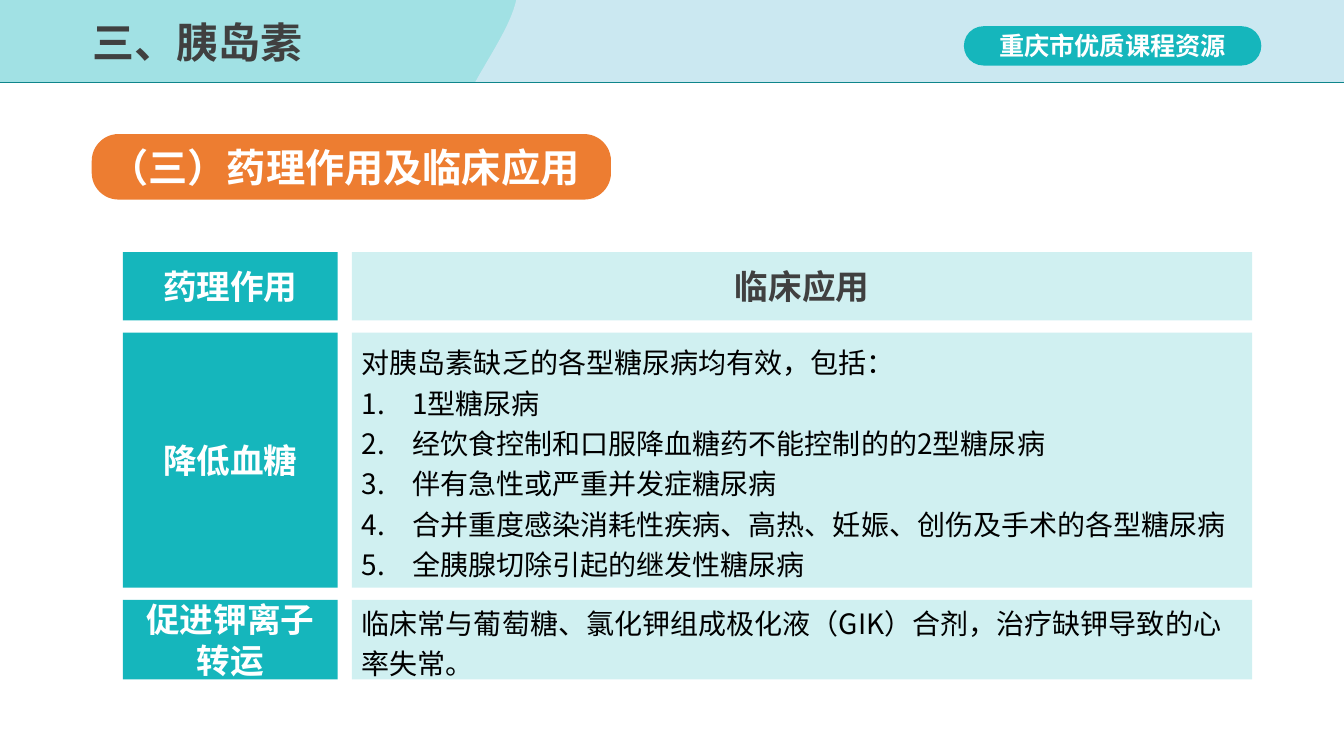
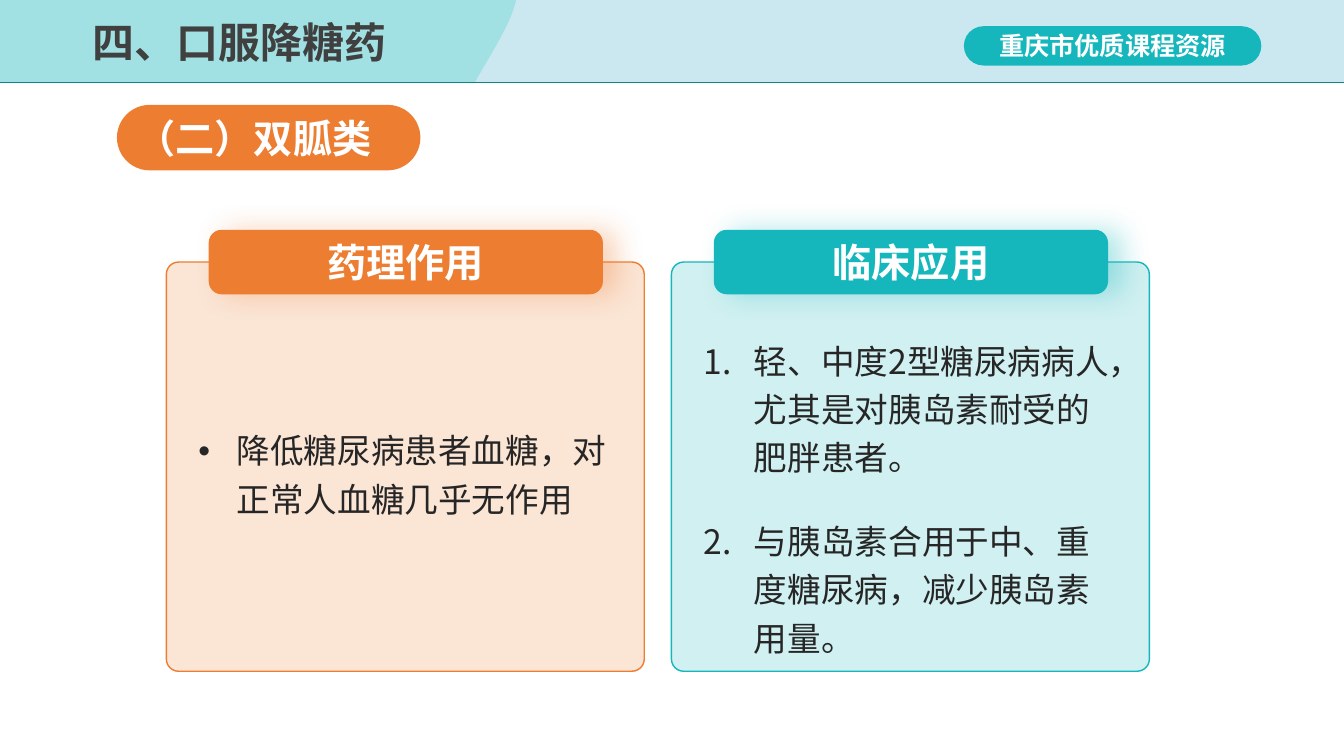
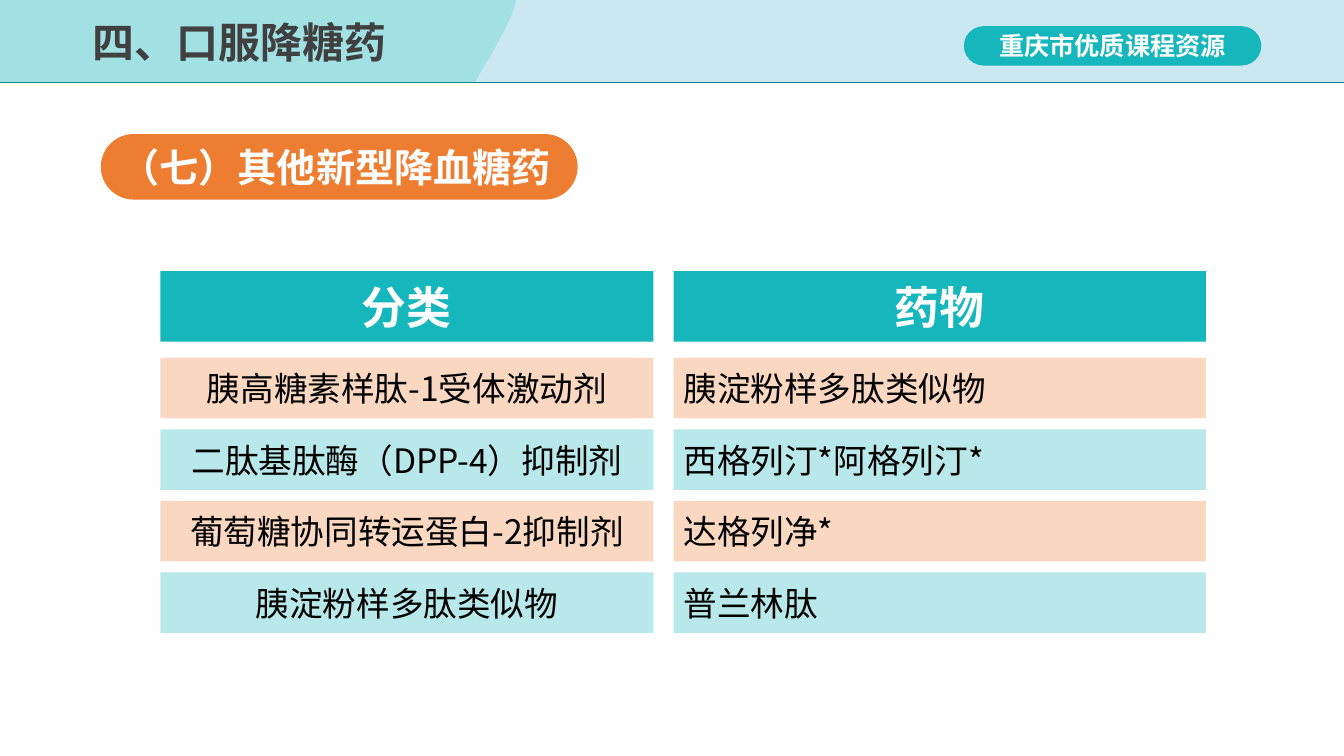
"""Build three pharmacology slides on insulin and oral glucose-lowering drugs."""
from dataclasses import dataclass
from typing import Optional

from lxml.etree import SubElement
from pptx import Presentation
from pptx.dml.color import RGBColor
from pptx.enum.shapes import MSO_CONNECTOR as CONN, MSO_SHAPE as SHAPE
from pptx.enum.text import MSO_ANCHOR as ANCHOR, MSO_AUTO_SIZE as AUTO, PP_ALIGN as ALIGN
from pptx.oxml.ns import qn
from pptx.util import Inches, Pt

FONT = "Noto Sans CJK SC"
TEAL = RGBColor(0x15, 0xB6, 0xBC)
DARK_TEAL = RGBColor(0x0F, 0x85, 0x8B)
ORANGE = RGBColor(0xED, 0x7D, 0x31)
PALE_BLUE = RGBColor(0xDE, 0xEB, 0xF7)
WHITE = RGBColor(0xFF, 0xFF, 0xFF)
BLACK = RGBColor(0, 0, 0)
GREY = RGBColor(0x40, 0x40, 0x40)
INK = RGBColor(0x26, 0x26, 0x26)
WIDTH, HEIGHT, BAND = 13.33, 7.5, 0.82


@dataclass(frozen=True)
class Box:
    """Place and size in inches."""
    x: float
    y: float
    w: float
    h: float

    def emu(self) -> tuple:
        """Return the four lengths for python-pptx."""
        return tuple(Inches(v) for v in (self.x, self.y, self.w, self.h))


@dataclass(frozen=True)
class Style:
    """Look of a paragraph."""
    size: int
    color: RGBColor
    bold: bool = False
    align: ALIGN = ALIGN.LEFT
    spacing: Optional[float] = None
    before: int = 0
    bullet: str = ""
    indent: float = 0


@dataclass(frozen=True)
class Para:
    """Text with its style."""
    text: str
    style: Style


@dataclass(frozen=True)
class Card:
    """Panel with a raised heading."""
    heading: str
    color: RGBColor
    text_y: float
    text_h: float
    paras: tuple


TITLE = Style(30, GREY, True, spacing=0.9)
BADGE = Style(18, WHITE, True, ALIGN.CENTER)
SECTION = Style(28, WHITE, True)
CARD_HEAD = Style(28, WHITE, True, ALIGN.CENTER)
LABEL = Style(24, WHITE, True, ALIGN.CENTER)
GRID_HEAD = Style(24, GREY, True, ALIGN.CENTER)
BODY = Style(20, BLACK, spacing=1.2)
NUMBERED = Style(20, BLACK, spacing=1.2, bullet="1.", indent=0.5)
CARD_DOT = Style(24, INK, spacing=1.2, bullet="•", indent=0.38)
CARD_NUMBER = Style(24, INK, spacing=1.2, before=25, bullet="1.", indent=0.5)
COLUMN_HEAD = Style(32, WHITE, True, ALIGN.CENTER)
CLASS_CELL = Style(24, BLACK, align=ALIGN.CENTER)
DRUG_CELL = Style(24, BLACK)


def add_bullet(p, style: Style) -> None:
    """Give a paragraph a hanging bullet or number."""
    pPr = p._p.get_or_add_pPr()
    pPr.set("marL", str(Inches(style.indent)))
    pPr.set("indent", str(-Inches(style.indent)))
    if style.bullet == "1.":
        SubElement(pPr, qn("a:buAutoNum"), type="arabicPeriod")
    else:
        SubElement(pPr, qn("a:buFont"), typeface="Arial")
        SubElement(pPr, qn("a:buChar"), char=style.bullet)


def write(tf, *paras: Para) -> None:
    """Fill a text frame, one paragraph per item."""
    tf.word_wrap = True
    for i, para in enumerate(paras):
        style = para.style
        p = tf.add_paragraph() if i else tf.paragraphs[0]
        p.alignment = style.align
        if style.spacing:
            p.line_spacing = style.spacing
        if i and style.before:
            p.space_before = Pt(style.before)
        if style.bullet:
            add_bullet(p, style)
        r = p.add_run()
        r.text = para.text
        r.font.size, r.font.bold = Pt(style.size), style.bold
        r.font.color.rgb = style.color
        r.font.name = FONT
        SubElement(r._r.get_or_add_rPr(), qn("a:ea"), typeface=FONT)


def paint(sp, color: RGBColor, alpha: int = 100, line: Optional[RGBColor] = None) -> None:
    """Set fill, opacity and outline, without a shadow."""
    sp.shadow.inherit = False
    sp.fill.solid()
    sp.fill.fore_color.rgb = color
    if alpha < 100:
        clr = sp._element.spPr.find(qn("a:solidFill")).find(qn("a:srgbClr"))
        SubElement(clr, qn("a:alpha"), val=str(alpha * 1000))
    if line is None:
        sp.line.fill.background()
    else:
        sp.line.color.rgb = line
        sp.line.width = Pt(1)


def add_block(s, box: Box, color: RGBColor, *paras: Para, alpha: int = 100,
              radius: Optional[float] = None, line: Optional[RGBColor] = None):
    """Draw a filled rectangle, rounded when a radius is given."""
    kind = SHAPE.RECTANGLE if radius is None else SHAPE.ROUNDED_RECTANGLE
    sp = s.shapes.add_shape(kind, *box.emu())
    if radius is not None:
        sp.adjustments[0] = radius
    paint(sp, color, alpha, line)
    sp.text_frame.vertical_anchor = ANCHOR.MIDDLE
    if paras:
        write(sp.text_frame, *paras)
    return sp


def add_glow(sp, color: RGBColor) -> None:
    """Add a soft coloured shadow to the right."""
    effects = sp._element.spPr.find(qn("a:effectLst"))
    shadow = SubElement(effects, qn("a:outerShdw"), blurRad=str(Pt(20)),
                        dist=str(Pt(10)), dir="0", rotWithShape="0")
    clr = SubElement(shadow, qn("a:srgbClr"), val=str(color))
    SubElement(clr, qn("a:alpha"), val="32000")


def add_sweep(s) -> None:
    """Draw the pale part of the band with its curved left edge."""
    curve = ((4.71, BAND), (4.86, 0.55), (5.07, 0.24), (5.12, 0))
    steps = 16
    edge = []
    for i in range(steps + 1):
        t = i / steps
        weights = ((1 - t) ** 3, 3 * t * (1 - t) ** 2, 3 * t * t * (1 - t), t ** 3)
        edge.append(tuple(Inches(sum(k * pt[axis] for k, pt in zip(weights, curve)))
                          for axis in (0, 1)))
    corners = [(Inches(WIDTH), 0), (Inches(WIDTH), Inches(BAND))]
    builder = s.shapes.build_freeform(*edge[0], scale=1.0)
    builder.add_line_segments(edge[1:] + corners, close=True)
    paint(builder.convert_to_shape(), PALE_BLUE, 70)


def add_band(s, layout) -> None:
    """Draw the header band and hand it to the layout."""
    old = list(s.shapes.element)
    add_block(s, Box(0, 0, WIDTH, BAND), TEAL, alpha=40)
    add_sweep(s)
    add_block(s, Box(9.56, 0.26, 2.95, 0.39), TEAL, Para("重庆市优质课程资源", BADGE), radius=0.5)
    rule = s.shapes.add_connector(CONN.STRAIGHT, 0, Inches(BAND), Inches(WIDTH), Inches(BAND))
    rule.line.color.rgb = DARK_TEAL
    rule.line.width = Pt(1)
    SubElement(rule._element.spPr, qn("a:effectLst"))
    for el in list(s.shapes.element):
        if el not in old:
            layout.shapes.element.append(el)


def add_slide(prs, title: str, section: str, box: Box, radius: float = 0.5):
    """Add a slide with its title and section label."""
    s = prs.slides.add_slide(prs.slide_layouts[5])
    sp = s.shapes.title
    sp.left, sp.top, sp.width, sp.height = Box(0.82, 0.08, 5.57, 0.74).emu()
    tf = sp.text_frame
    tf.auto_size, tf.vertical_anchor = AUTO.NONE, ANCHOR.MIDDLE
    write(tf, Para(title, TITLE))
    add_block(s, box, ORANGE, Para(section, SECTION), radius=radius)
    return s


def add_effects_grid(s) -> None:
    """Draw the grid of insulin effects and uses."""
    uses = ("1型糖尿病", "经饮食控制和口服降血糖药不能控制的的2型糖尿病",
            "伴有急性或严重并发症糖尿病",
            "合并重度感染消耗性疾病、高热、妊娠、创伤及手术的各型糖尿病",
            "全胰腺切除引起的继发性糖尿病")
    rows = (
        (0.68, "药理作用", [Para("临床应用", GRID_HEAD)]),
        (2.53, "降低血糖", [Para("对胰岛素缺乏的各型糖尿病均有效，包括：", BODY)]
         + [Para(use, NUMBERED) for use in uses]),
        (0.79, "促进钾离子转运",
         [Para("临床常与葡萄糖、氯化钾组成极化液（GIK）合剂，治疗缺钾导致的心率失常。", BODY)]),
    )
    y, gap = 2.5, 0.12
    for h, effect, paras in rows:
        add_block(s, Box(1.22, y, 2.13, h), TEAL, Para(effect, LABEL))
        add_block(s, Box(3.49, y, 8.93, h), TEAL, *paras, alpha=20)
        y += h + gap


def add_card(s, x: float, card: Card) -> None:
    """Draw a panel, its text and its raised heading."""
    add_block(s, Box(x, 2.6, 4.74, 4.06), card.color, alpha=20, radius=0.03, line=card.color)
    tb = s.shapes.add_textbox(*Box(x + 0.22, card.text_y, 4.3, card.text_h).emu())
    write(tb.text_frame, *card.paras)
    head = add_block(s, Box(x + 0.42, 2.28, 3.91, 0.64), card.color,
                     Para(card.heading, CARD_HEAD), radius=0.2)
    add_glow(head, card.color)


def add_drug_grid(s) -> None:
    """Draw the drug classes beside their drugs."""
    columns = ((1.59, 4.89, "分类", CLASS_CELL), (6.68, 5.28, "药物", DRUG_CELL))
    rows = (("胰高糖素样肽-1受体激动剂", "胰淀粉样多肽类似物"),
            ("二肽基肽酶（DPP-4）抑制剂", "西格列汀*阿格列汀*"),
            ("葡萄糖协同转运蛋白-2抑制剂", "达格列净*"),
            ("胰淀粉样多肽类似物", "普兰林肽"))
    for col, (x, w, heading, style) in enumerate(columns):
        add_block(s, Box(x, 2.69, w, 0.7), TEAL, Para(heading, COLUMN_HEAD))
        for i, row in enumerate(rows):
            add_block(s, Box(x, 3.55 + 0.71 * i, w, 0.6), (ORANGE, TEAL)[i % 2],
                      Para(row[col], style), alpha=30)


def main() -> None:
    """Build and save the presentation."""
    prs = Presentation()
    prs.slide_width, prs.slide_height = Inches(WIDTH), Inches(HEIGHT)

    s = add_slide(prs, "三、胰岛素", "（三）药理作用及临床应用", Box(0.91, 1.33, 5.15, 0.65), 0.41)
    add_band(s, prs.slide_layouts[5])
    add_effects_grid(s)

    s = add_slide(prs, "四、口服降糖药", "（二）双胍类", Box(1.16, 1.04, 3.01, 0.65))
    cards = (
        Card("药理作用", ORANGE, 4.14, 1.04,
             (Para("降低糖尿病患者血糖，对正常人血糖几乎无作用", CARD_DOT),)),
        Card("临床应用", TEAL, 3.25, 3.32,
             (Para("轻、中度2型糖尿病病人，尤其是对胰岛素耐受的肥胖患者。", CARD_NUMBER),
              Para("与胰岛素合用于中、重度糖尿病，减少胰岛素用量。", CARD_NUMBER))),
    )
    for i, card in enumerate(cards):
        add_card(s, 1.65 + 5.01 * i, card)

    s = add_slide(prs, "四、口服降糖药", "（七）其他新型降血糖药", Box(1, 1.33, 4.73, 0.65))
    add_drug_grid(s)
    prs.save("out.pptx")


if __name__ == "__main__":
    main()
